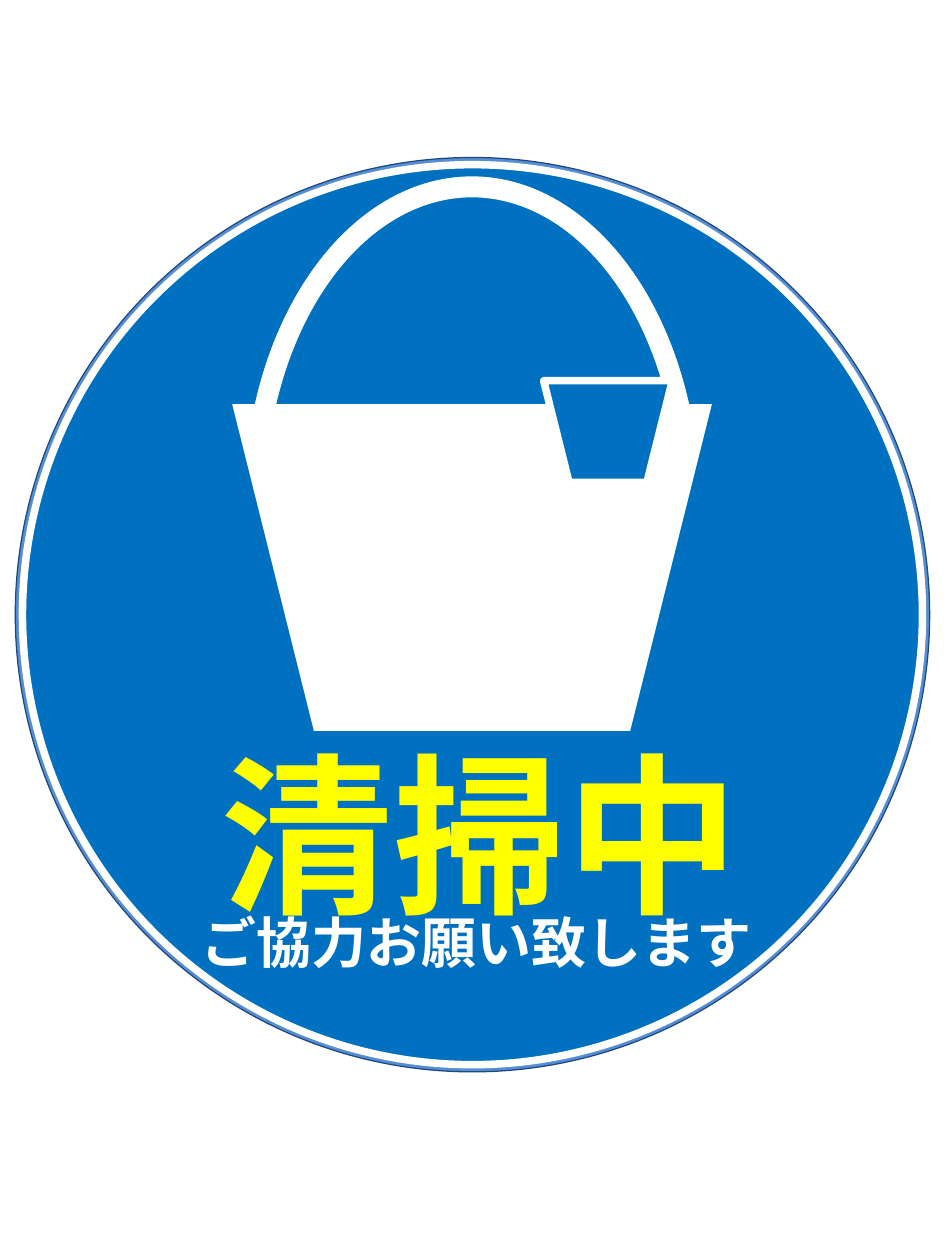
from dataclasses import dataclass
from typing import Optional

from pptx import Presentation
from pptx.dml.color import RGBColor
from pptx.enum.shapes import MSO_SHAPE as Preset
from pptx.enum.text import MSO_AUTO_SIZE as AutoSize
from pptx.util import Inches, Pt

WHITE = RGBColor(0xFF, 0xFF, 0xFF)
SIGN_BLUE = RGBColor(0x00, 0x70, 0xC0)
RIM_BLUE = RGBColor(0x55, 0x8E, 0xD5)
NAVY = RGBColor(0x1F, 0x49, 0x7D)
YELLOW = RGBColor(0xFF, 0xFF, 0x00)


@dataclass
class Box:
    left: float
    top: float
    width: float
    height: float

    def lengths(self) -> tuple:
        return tuple(Inches(v) for v in (self.left, self.top, self.width, self.height))


@dataclass
class Part:
    preset: Preset
    box: Box
    fill: RGBColor
    line: Optional[RGBColor] = None
    line_width: float = 0
    rotation: float = 0
    adjustments: tuple = ()


@dataclass
class Message:
    text: str
    box: Box
    size: float
    color: RGBColor


def draw_part(shapes, part: Part) -> None:
    shape = shapes.add_shape(part.preset, *part.box.lengths())
    shape.shadow.inherit = False
    shape.rotation = part.rotation
    for index, value in enumerate(part.adjustments):
        shape.adjustments[index] = value
    shape.fill.solid()
    shape.fill.fore_color.rgb = part.fill
    if part.line is None:
        shape.line.fill.background()
    else:
        shape.line.color.rgb = part.line
        shape.line.width = Pt(part.line_width)


def write_message(shapes, message: Message) -> None:
    frame = shapes.add_textbox(*message.box.lengths()).text_frame
    frame.word_wrap = False
    frame.auto_size = AutoSize.SHAPE_TO_FIT_TEXT
    frame.text = message.text
    font = frame.paragraphs[0].runs[0].font
    font.name = "Calibri"
    font.size = Pt(message.size)
    font.bold = True
    font.color.rgb = message.color


# Round sign: outer rim and white-edged disc
SIGN = [
    Part(Preset.OVAL, Box(0.17, 1.75, 10.16, 10.16), RIM_BLUE, NAVY, 1),
    Part(Preset.OVAL, Box(0.25, 1.83, 10, 10), SIGN_BLUE, WHITE, 6),
]

# Bucket: handle, body and the cloth over its edge
BUCKET = [
    Part(Preset.BLOCK_ARC, Box(2.71, 1.96, 5.07, 7.3), WHITE,
         adjustments=(115.42, 207.76, 0.046)),
    Part(Preset.TRAPEZOID, Box(2.58, 4.49, 5.33, 3.63), WHITE, rotation=180),
    Part(Preset.TRAPEZOID, Box(6.04, 4.23, 1.43, 1.13), SIGN_BLUE, WHITE, 6,
         rotation=180),
]

MESSAGES = [
    Message("清掃中", Box(2.36, 8.04, 6.03, 2.42), 138, YELLOW),
    Message("ご協力お願い致します", Box(2.14, 10.04, 6.47, 0.84), 44, WHITE),
]


def main() -> None:
    presentation = Presentation()
    presentation.slide_width = Inches(10.5)
    presentation.slide_height = Inches(14)
    blank_layout = presentation.slide_layouts[6]
    slide = presentation.slides.add_slide(blank_layout)

    # Each drawing is a group of its own
    for drawing in (SIGN, BUCKET):
        group = slide.shapes.add_group_shape()
        for part in drawing:
            draw_part(group.shapes, part)

    for message in MESSAGES:
        write_message(slide.shapes, message)

    presentation.save("out.pptx")


if __name__ == "__main__":
    main()
